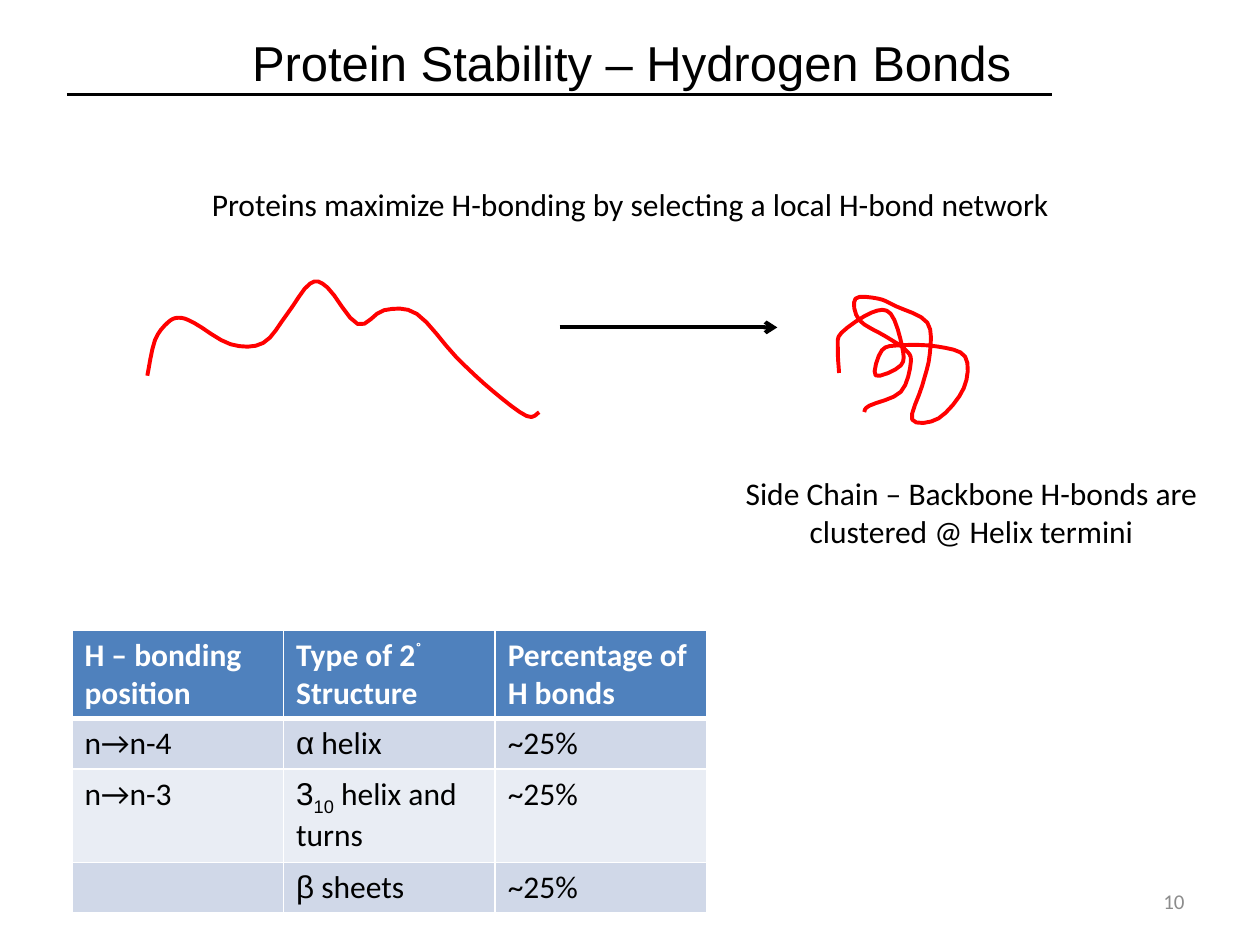
from dataclasses import dataclass
from lxml.etree import SubElement
from pptx import Presentation
from pptx.dml.color import RGBColor
from pptx.enum.shapes import MSO_CONNECTOR
from pptx.enum.text import MSO_ANCHOR, PP_ALIGN
from pptx.oxml.ns import qn
from pptx.util import Cm, Pt

BLACK, WHITE, RED, GREY = "000000", "FFFFFF", "FF0000", "8C8C8C"
HEADER_FILL, BAND_FILLS = "4F81BD", ("E9EDF4", "D0D8E8")
BODY_FONT, SYMBOL_FONT, BODY_SIZE = "Calibri", "Arial", 18
CHAIN_UNIT = Cm(0.0254)
CURVE_STEPS = 4


@dataclass
class Piece:
    """A stretch of cell text; baseline is a percentage, positive for superscript."""
    text: str
    font: str = BODY_FONT
    baseline: int = 0


UNFOLDED_CHAIN = [
    (0, 73), (6, 45), (16, 31), (25, 27), (37, 31), (66, 48), (92, 47), (111, 24),
    (129, 0), (143, 3), (167, 32), (188, 21), (214, 24), (245, 58), (274, 85),
    (301, 105), (311, 102),
]
INNER_LOOP = [
    (1, 61), (0, 41), (3, 29), (27, 13), (42, 14), (51, 40), (50, 55), (30, 63),
    (35, 43), (50, 39),
]
RIGHT_LOOP = [(79, 40), (101, 48), (100, 73), (80, 97), (59, 98), (67, 71)]
TOP_LOOP = [(73, 46), (71, 21), (46, 8), (32, 2), (14, 2), (17, 19)]
LOOSE_END = [(38, 32), (53, 42), (58, 52), (50, 76), (25, 87), (21, 92)]
FOLDED_CHAIN = INNER_LOOP + RIGHT_LOOP + TOP_LOOP + LOOSE_END

BOND_ROWS = [
    ([Piece("H – bonding position")],
     [Piece("Type of 2"), Piece("˚", baseline=30), Piece(" Structure")],
     [Piece("Percentage of H bonds")]),
    ([Piece("n→n-4")], [Piece("α", SYMBOL_FONT), Piece(" helix")], [Piece("~25%")]),
    ([Piece("n→n-3")],
     [Piece("3", SYMBOL_FONT), Piece("10", SYMBOL_FONT, -25), Piece(" helix and turns")],
     [Piece("~25%")]),
    ([], [Piece("β", SYMBOL_FONT), Piece(" sheets")], [Piece("~25%")]),
]
ROW_HEIGHTS = (1.73, 1.02, 1.88, 1.02)


def color(value):
    """Return the colour for a hex string."""
    return RGBColor.from_string(value)


def format_paragraph(paragraph, size, hex_color, font=BODY_FONT, align=PP_ALIGN.LEFT):
    """Set the font and alignment of a paragraph."""
    paragraph.alignment = align
    paragraph.font.size = Pt(size)
    paragraph.font.name = font
    paragraph.font.color.rgb = color(hex_color)


def add_text(slide, box, text, size=BODY_SIZE, hex_color=BLACK, align=PP_ALIGN.LEFT,
             wrap=True, anchor=MSO_ANCHOR.TOP):
    """Add a one-paragraph text box."""
    frame = slide.shapes.add_textbox(*map(Cm, box)).text_frame
    frame.word_wrap = wrap
    frame.vertical_anchor = anchor
    frame.text = text
    format_paragraph(frame.paragraphs[0], size, hex_color, align=align)


def add_line(slide, left, right, top, width, arrow=False):
    """Add a horizontal black line, with an arrowhead on request."""
    line = slide.shapes.add_connector(
        MSO_CONNECTOR.STRAIGHT, Cm(left), Cm(top), Cm(right), Cm(top))
    line.line.color.rgb = color(BLACK)
    line.line.width = Pt(width)
    if arrow:
        SubElement(line.line._get_or_add_ln(), qn("a:tailEnd"), type="arrow")
    SubElement(line._element.spPr, qn("a:effectLst"))


def add_title(slide, box):
    """Place the title and the rule under it."""
    left, top, width, height = box
    title = slide.shapes.title
    title.left, title.top, title.width, title.height = map(Cm, box)
    title.fill.solid()
    title.fill.fore_color.rgb = color(WHITE)
    title.text_frame.vertical_anchor = MSO_ANCHOR.MIDDLE
    title.text_frame.text = "Protein Stability – Hydrogen Bonds"
    format_paragraph(title.text_frame.paragraphs[0], 28, BLACK, "Arial", PP_ALIGN.CENTER)
    add_line(slide, left - 1.04, left + 18.82, top + height + 0.1, 1.5)


def spline(before, start, end, after, t):
    """Return the Catmull-Rom value between start and end at fraction t."""
    slope_in, slope_out = (end - before) / 2, (after - start) / 2
    bend = 3 * (end - start) - 2 * slope_in - slope_out
    twist = 2 * (start - end) + slope_in + slope_out
    return start + slope_in * t + bend * t ** 2 + twist * t ** 3


def smooth(knots):
    """Return points along a smooth curve through the knots."""
    padded = [knots[0], *knots, knots[-1]]
    points = [knots[0]]
    for neighbours in zip(padded, padded[1:], padded[2:], padded[3:]):
        xs, ys = zip(*neighbours)
        for step in range(1, CURVE_STEPS + 1):
            t = step / CURVE_STEPS
            points.append((spline(*xs, t), spline(*ys, t)))
    return points


def add_chain(slide, left, top, knots):
    """Draw a protein chain as an open red curve."""
    points = [(x * CHAIN_UNIT, y * CHAIN_UNIT) for x, y in smooth(knots)]
    builder = slide.shapes.build_freeform(*points[0])
    builder.add_line_segments(points[1:], close=False)
    chain = builder.convert_to_shape(Cm(left), Cm(top))
    chain.fill.background()
    chain.line.color.rgb = color(RED)
    chain.line.width = Pt(2.25)
    chain.shadow.inherit = False


def add_folding(slide, left, top):
    """Show a loose chain, an arrow and the folded chain."""
    add_chain(slide, left, top, UNFOLDED_CHAIN)
    add_line(slide, left + 8.31, left + 12.7, top + 0.88, 2.25, arrow=True)
    add_chain(slide, left + 13.92, top + 0.25, FOLDED_CHAIN)


def set_borders(cell, top, bottom):
    """Give a cell white borders, thin at the sides."""
    properties = cell._tc.get_or_add_tcPr()
    for side, width in {"L": 1, "R": 1, "T": top, "B": bottom}.items():
        border = SubElement(properties, qn(f"a:ln{side}"), w=str(Pt(width)))
        fill = SubElement(border, qn("a:solidFill"))
        SubElement(fill, qn("a:srgbClr"), val=WHITE)


def fill_cell(cell, pieces, row):
    """Write and format one cell of the bond table."""
    header = row == 0
    text_color = WHITE if header else BLACK
    set_borders(cell, top=3 if row == 1 else 1, bottom=3 if header else 1)
    cell.fill.solid()
    cell.fill.fore_color.rgb = color(HEADER_FILL if header else BAND_FILLS[row % 2])
    paragraph = cell.text_frame.paragraphs[0]
    format_paragraph(paragraph, BODY_SIZE, text_color)
    for piece in pieces:
        run = paragraph.add_run()
        run.text = piece.text
        run.font.name = piece.font
        run.font.size = Pt(BODY_SIZE)
        run.font.bold = header
        run.font.color.rgb = color(text_color)
        if piece.baseline:
            run._r.get_or_add_rPr().set("baseline", str(piece.baseline * 1000))


def add_bond_table(slide, box):
    """Add the table of hydrogen bond positions."""
    column_count = len(BOND_ROWS[0])
    table = slide.shapes.add_table(len(BOND_ROWS), column_count, *map(Cm, box)).table
    for column in table.columns:
        column.width = Cm(box[2] / column_count)
    for row, (cells, height) in enumerate(zip(BOND_ROWS, ROW_HEIGHTS)):
        table.rows[row].height = Cm(height)
        for column, pieces in enumerate(cells):
            fill_cell(table.cell(row, column), pieces, row)


def main():
    """Build and save the slide."""
    presentation = Presentation()
    presentation.slide_width, presentation.slide_height = Cm(25.4), Cm(19.05)
    slide = presentation.slides.add_slide(presentation.slide_layouts[5])
    add_title(slide, (2.39, 0.71, 20.68, 1.09))
    add_text(slide, (18.21, 17.65, 5.92, 1.02), "10", 12, GREY, PP_ALIGN.RIGHT,
             anchor=MSO_ANCHOR.MIDDLE)
    add_text(slide, (4.02, 3.61, 17.45, 1.02),
             "Proteins maximize H-bonding by selecting a local H-bond network", wrap=False)
    add_folding(slide, 2.97, 5.72)
    add_bond_table(slide, (1.45, 12.7, 12.8, sum(ROW_HEIGHTS)))
    add_text(slide, (13.77, 9.43, 11.63, 1.8),
             "Side Chain – Backbone H-bonds are clustered @ Helix termini",
             align=PP_ALIGN.CENTER)
    presentation.save("out.pptx")


if __name__ == "__main__":
    main()
